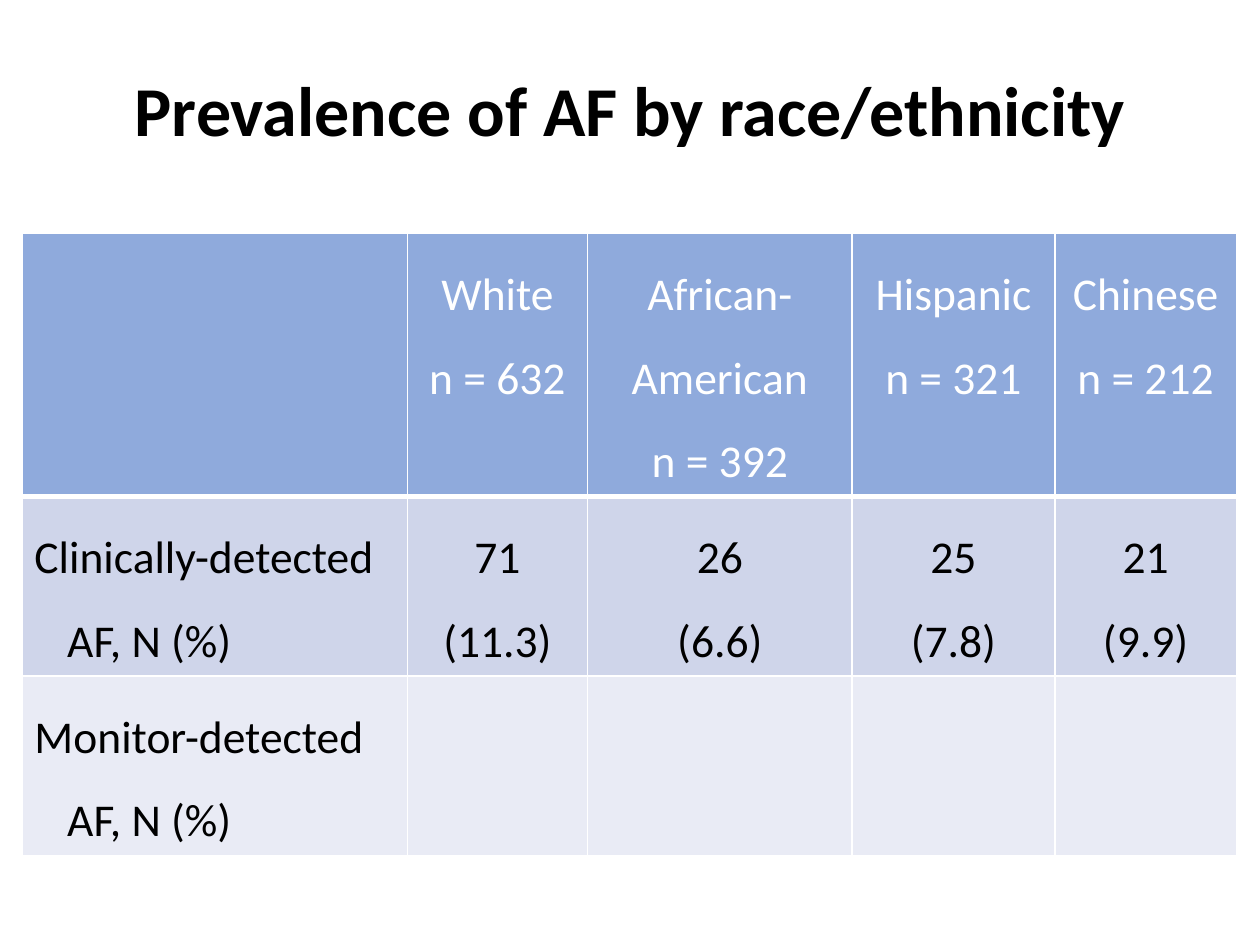
from lxml import etree
from pptx import Presentation
from pptx.dml.color import RGBColor
from pptx.enum import text
from pptx.oxml import ns
from pptx.util import Pt

TITLE = "Prevalence of AF by race/ethnicity"
# Each cell is a list of paragraphs.
ROWS = [
    [[], ["White", "n = 632"], ["African-American", "n = 392"],
     ["Hispanic", "n = 321"], ["Chinese", "n = 212"]],
    [["Clinically-detected AF, N (%)"], ["71", "(11.3)"], ["26", "(6.6)"],
     ["25", "(7.8)"], ["21", "(9.9)"]],
    [["Monitor-detected AF, N (%)"], [], [], [], []],
]
COLORS = {"header": "8FAADC", "band_dark": "CFD5EA", "band_light": "E9EBF5",
          "white": "FFFFFF", "black": "000000"}
ROW_FILLS = ["header", "band_dark", "band_light"]
COLUMN_WIDTHS = [220.3, 103, 151.2, 115.9, 103.7]
ROW_HEIGHTS = [80.6, 82.8, 100.1]
TABLE_LEFT, TABLE_TOP = 12.5, 133.2
LABEL_INDENT = 18.7
FONT = "Calibri"


def rgb(name):
    return RGBColor.from_string(COLORS[name])


def add_span(para, words, size, color, bold):
    span = para.add_run()
    span.text = words
    span.font.name = FONT
    span.font.size = Pt(size)
    span.font.bold = bold
    span.font.color.rgb = rgb(color)


def set_borders(cell, widths):
    """Draw white cell edges; must precede the fill to keep the XML order valid."""
    properties = cell._tc.get_or_add_tcPr()
    for side, width in widths.items():
        line = etree.SubElement(properties, ns.qn(f"a:ln{side}"), w=str(Pt(width)))
        fill = etree.SubElement(line, ns.qn("a:solidFill"))
        etree.SubElement(fill, ns.qn("a:srgbClr"), val=COLORS["white"])


def fill_cell(cell, lines, row, column):
    is_header = row == 0
    set_borders(cell, {"L": 1, "R": 1, "T": 3 if row == 1 else 1,
                       "B": 3 if is_header else 1})
    cell.fill.solid()
    cell.fill.fore_color.rgb = rgb(ROW_FILLS[row])
    frame = cell.text_frame
    for index, words in enumerate(lines):
        para = frame.add_paragraph() if index else frame.paragraphs[0]
        para.line_spacing = 1.5
        if column == 0:
            hanging = para._p.get_or_add_pPr()
            hanging.set("marL", str(Pt(LABEL_INDENT)))
            hanging.set("indent", str(-Pt(LABEL_INDENT)))
        else:
            para.alignment = text.PP_ALIGN.CENTER
        add_span(para, words, 26, "white" if is_header else "black", False)


def add_title(page):
    title = page.shapes.title
    title.left, title.top, title.width, title.height = (
        Pt(36), Pt(26.6), Pt(648), Pt(71.3))
    title.text_frame.vertical_anchor = text.MSO_ANCHOR.MIDDLE
    para = title.text_frame.paragraphs[0]
    para.alignment = text.PP_ALIGN.CENTER
    add_span(para, TITLE, 40, "black", True)


def add_prevalence_table(page):
    table = page.shapes.add_table(
        len(ROWS), len(COLUMN_WIDTHS), Pt(TABLE_LEFT), Pt(TABLE_TOP),
        Pt(sum(COLUMN_WIDTHS)), Pt(sum(ROW_HEIGHTS))).table
    for column, width in zip(table.columns, COLUMN_WIDTHS):
        column.width = Pt(width)
    for row, height in zip(table.rows, ROW_HEIGHTS):
        row.height = Pt(height)
    for r, cells in enumerate(ROWS):
        for c, lines in enumerate(cells):
            fill_cell(table.cell(r, c), lines, r, c)


def main():
    deck = Presentation()
    deck.slide_width, deck.slide_height = Pt(720), Pt(540)
    page = deck.slides.add_slide(deck.slide_layouts.get_by_name("Title Only"))
    add_title(page)
    add_prevalence_table(page)
    deck.save("out.pptx")


if __name__ == "__main__":
    main()
